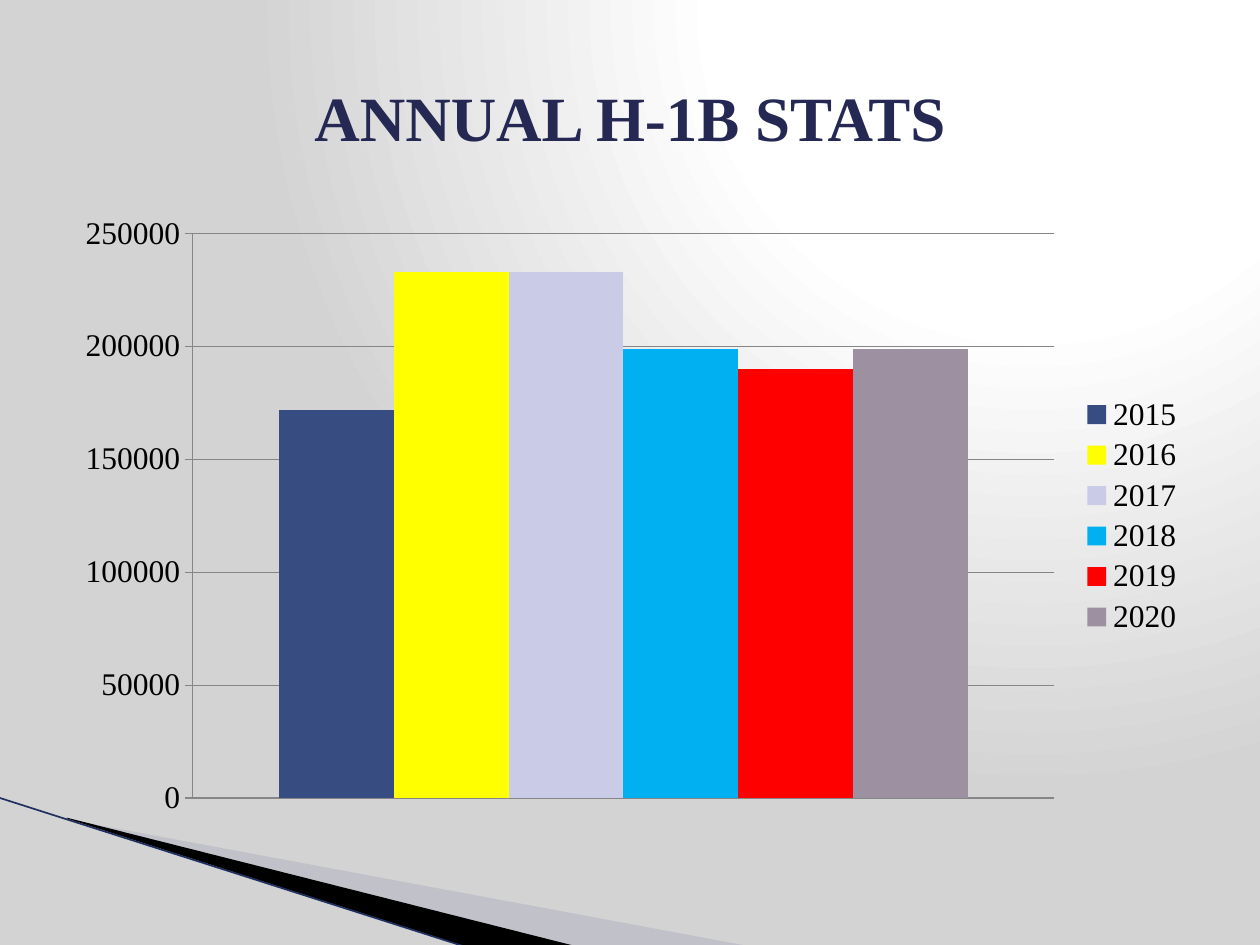
from lxml import etree
from pptx import Presentation
from pptx.chart.data import CategoryChartData
from pptx.dml.color import RGBColor
from pptx.enum.chart import XL_CHART_TYPE, XL_LEGEND_POSITION, XL_TICK_MARK
from pptx.enum.shapes import MSO_CONNECTOR
from pptx.enum.text import MSO_ANCHOR, PP_ALIGN
from pptx.oxml import parse_xml
from pptx.oxml.ns import qn
from pptx.util import Pt

COLUMN = XL_CHART_TYPE.COLUMN_CLUSTERED
RIGHT = XL_LEGEND_POSITION.RIGHT
OUTSIDE = XL_TICK_MARK.OUTSIDE
STRAIGHT = MSO_CONNECTOR.STRAIGHT
MIDDLE = MSO_ANCHOR.MIDDLE
CENTER = PP_ALIGN.CENTER

FONT = "Times New Roman"
NAVY = RGBColor(0x24, 0x28, 0x52)
EDGE = RGBColor(0x1F, 0x2F, 0x5F)
MIST = RGBColor(0xA4, 0xA8, 0xBC)
BLACK = RGBColor(0, 0, 0)
GRAY = RGBColor(0x86, 0x86, 0x86)

BACK = """
<a:gradFill xmlns:a="http://schemas.openxmlformats.org/drawingml/2006/main" rotWithShape="1">
  <a:gsLst>
    <a:gs pos="0"><a:srgbClr val="FFFFFF"/></a:gs>
    <a:gs pos="40000"><a:srgbClr val="FFFFFF"/></a:gs>
    <a:gs pos="100000"><a:srgbClr val="D3D3D3"/></a:gs>
  </a:gsLst>
  <a:path path="circle"><a:fillToRect l="65000" t="0" r="0" b="98000"/></a:path>
</a:gradFill>"""

STATS = [
    ("2015", 172000, RGBColor(0x37, 0x4C, 0x81)),
    ("2016", 233000, RGBColor(0xFF, 0xFF, 0x00)),
    ("2017", 233000, RGBColor(0xC9, 0xCB, 0xE7)),
    ("2018", 199000, RGBColor(0x00, 0xB0, 0xF0)),
    ("2019", 190000, RGBColor(0xFF, 0x00, 0x00)),
    ("2020", 199000, RGBColor(0x9D, 0x90, 0xA0)),
]

prs = Presentation()
prs.slide_width, prs.slide_height = Pt(720), Pt(540)
slide = prs.slides.add_slide(prs.slide_layouts[6])
shapes = slide.shapes

# Background
fill = slide.background.fill
fill.gradient()
old = slide.element.find(".//" + qn("a:gradFill"))
old.getparent().replace(old, parse_xml(BACK))

# Corner wedges
WEDGES = [
    ([(39.6, 468.4), (428.4, 540.7), (328.3, 540.7), (39.6, 468)], MIST),
    ([(38.2, 467.3), (329, 540.7), (267.8, 541.4), (38.9, 468)], BLACK),
]
for points, color in WEDGES:
    first, *rest = [(Pt(x), Pt(y)) for x, y in points]
    path = shapes.build_freeform(*first)
    path.add_line_segments(rest, close=True)
    wedge = path.convert_to_shape()
    wedge.shadow.inherit = False
    wedge.fill.solid()
    wedge.fill.fore_color.rgb = color
    wedge.line.fill.background()
    if color == MIST:
        tint = wedge.element.spPr.find(".//" + qn("a:srgbClr"))
        etree.SubElement(tint, qn("a:alpha")).set("val", "40000")

edge = shapes.add_connector(STRAIGHT, Pt(-0.7), Pt(455.8), Pt(267.1), Pt(541.4))
edge.line.color.rgb = EDGE
edge.line.width = Pt(0.95)
etree.SubElement(edge.element.spPr, qn("a:effectLst"))

# Title
title = shapes.add_textbox(Pt(36), Pt(21.6), Pt(648), Pt(90))
frame = title.text_frame
frame.word_wrap = True
frame.vertical_anchor = MIDDLE
para = frame.paragraphs[0]
para.text = "ANNUAL H-1B STATS"
para.alignment = CENTER
para.font.name = FONT
para.font.size = Pt(36)
para.font.bold = True
para.font.color.rgb = NAVY

# Chart
data = CategoryChartData()
data.categories = ["1"]
for year, count, color in STATS:
    data.add_series(year, [count])
chart = shapes.add_chart(COLUMN, Pt(36), Pt(116.6), Pt(648), Pt(356.4), data).chart
chart.has_title = False
chart.font.name = FONT
chart.font.size = Pt(18)
chart.font.color.rgb = BLACK
chart.has_legend = True
chart.legend.position = RIGHT
chart.legend.include_in_layout = False

plot = chart.plots[0]
plot.gap_width = 150
plot.overlap = 0
plot.vary_by_categories = False
for series, (year, count, color) in zip(plot.series, STATS):
    series.format.fill.solid()
    series.format.fill.fore_color.rgb = color

chart.category_axis.visible = False
axis = chart.value_axis
axis.minimum_scale, axis.maximum_scale = 0, 250000
axis.major_unit = 50000
axis.major_tick_mark = OUTSIDE
axis.has_major_gridlines = True
for line in (axis.format.line, axis.major_gridlines.format.line):
    line.color.rgb = GRAY
    line.width = Pt(0.75)

prs.save("out.pptx")
